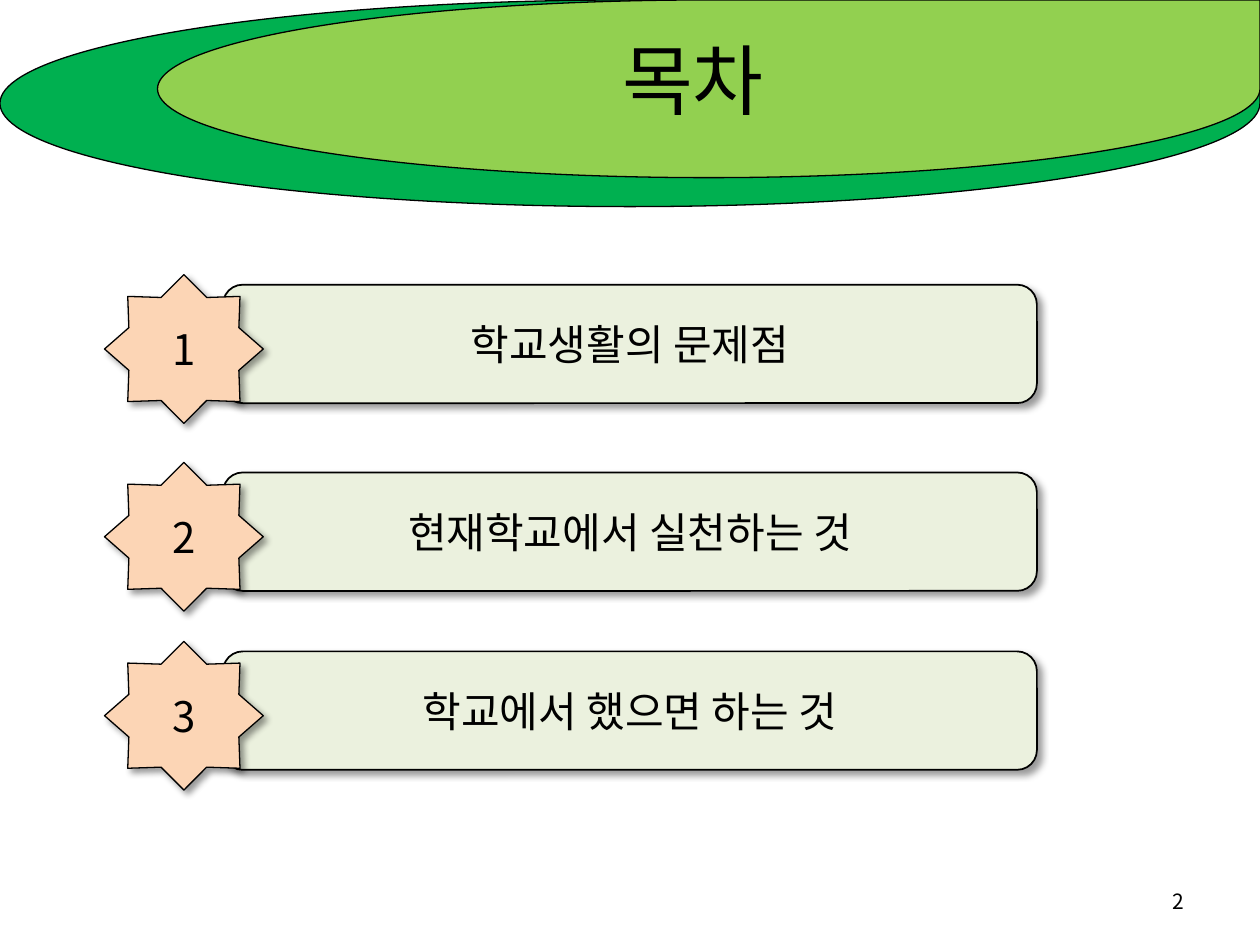
from lxml.etree import SubElement
from pptx import Presentation
from pptx.dml.color import RGBColor
from pptx.enum.shapes import MSO_SHAPE as Shape
from pptx.enum.text import MSO_ANCHOR as Anchor, PP_ALIGN as Align
from pptx.oxml.ns import qn
from pptx.util import Inches, Pt

COLORS = {"black": "000000", "green": "00B050", "lime": "92D050",
          "bar": "EBF1DE", "star": "FCD5B5"}
FONT = "Noto Sans CJK KR"
AGENDA = [(2.18, "학교생활의 문제점"),
          (3.67, "현재학교에서 실천하는 것"),
          (5.09, "학교에서 했으면 하는 것")]


def color(name):
    """Return the named palette colour."""
    return RGBColor.from_string(COLORS[name])


def write_text(shape, text, size, alignment=Align.CENTER):
    """Write one vertically centred line of text in a shape."""
    frame = shape.text_frame
    frame.word_wrap = True
    frame.vertical_anchor = Anchor.MIDDLE
    paragraph = frame.paragraphs[0]
    paragraph.alignment = alignment
    run = paragraph.add_run()
    run.text = text
    for name, value in {"name": FONT, "size": Pt(size)}.items():
        setattr(run.font, name, value)
    run.font.color.rgb = color("black")
    SubElement(run.font._element, qn("a:ea"), typeface=FONT)


def add_label(slide, box, text, size, alignment=Align.CENTER):
    """Add a text box at the given box."""
    write_text(slide.shapes.add_textbox(*map(Inches, box)), text, size, alignment)


def add_outlined(shapes, kind, box, fill, width=0.75):
    """Add a filled preset shape with a black outline and no shadow."""
    shape = shapes.add_shape(kind, *map(Inches, box))
    shape.shadow.inherit = False
    shape.fill.solid()
    shape.fill.fore_color.rgb = color(fill)
    shape.line.color.rgb = color("black")
    shape.line.width = Pt(width)
    return shape


def add_shadow(shape):
    """Give a shape a soft shadow to the lower right."""
    effects = shape._element.spPr.find(qn("a:effectLst"))
    shadow = SubElement(effects, qn("a:outerShdw"), blurRad=str(Pt(4)),
                        dist=str(Pt(3)), dir="2700000", algn="tl", rotWithShape="0")
    shade = SubElement(shadow, qn("a:srgbClr"), val=COLORS["black"])
    SubElement(shade, qn("a:alpha"), val="40000")


def add_header(slide, left, top, width, height, title):
    """Draw two nested teardrops with the title over them."""
    add_outlined(slide.shapes, Shape.TEAR, (left, top, width, height), "green")
    add_outlined(slide.shapes, Shape.TEAR,
                 (left + 1.25, top, width - 1.25, height - 0.23), "lime")
    add_label(slide, (left + 1, top, width - 1, 1.25), title, 44)


def add_agenda_item(slide, left, top, width, height, number, text):
    """Group a rounded bar with a numbered star over its left end."""
    shapes = slide.shapes.add_group_shape().shapes
    bar_box = (left + 0.94, top + 0.08, width - 0.94, 0.94)
    star_box = (left, top, 1.26, height)
    parts = [(Shape.ROUNDED_RECTANGLE, bar_box, "bar", 1, text),
             (Shape.STAR_8_POINT, star_box, "star", 0.75, str(number))]
    for kind, box, fill, line_width, words in parts:
        shape = add_outlined(shapes, kind, box, fill, line_width)
        add_shadow(shape)
        write_text(shape, words, 24)


def main():
    """Build and save the contents slide."""
    presentation = Presentation()
    presentation.slide_width, presentation.slide_height = Inches(10), Inches(7.5)
    slide = presentation.slides.add_slide(presentation.slide_layouts[6])
    add_header(slide, 0, 0, 10, 1.64, "목차")
    add_label(slide, (7.17, 6.95, 2.33, 0.4), "2", 12, Align.RIGHT)
    for number, (top, text) in enumerate(AGENDA, 1):
        add_agenda_item(slide, 0.83, top, 7.4, 1.18, number, text)
    presentation.save("out.pptx")


if __name__ == "__main__":
    main()
